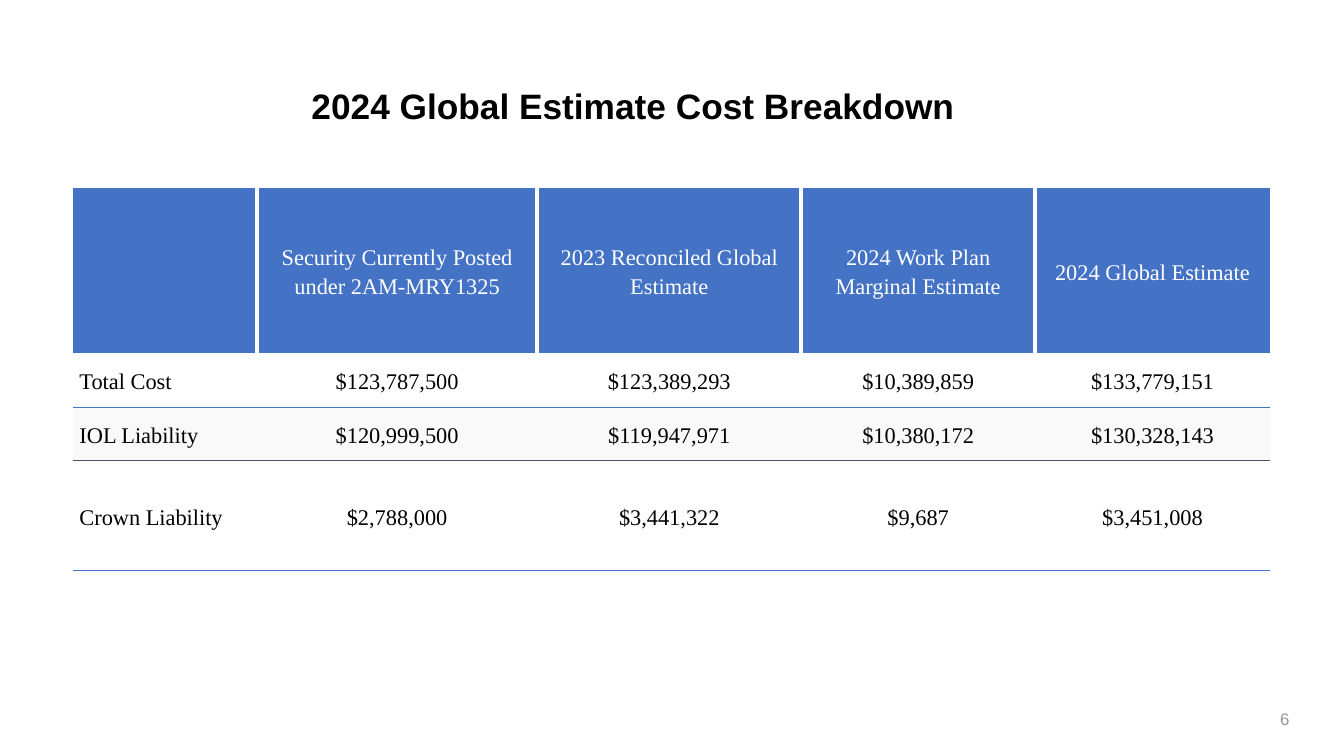
from dataclasses import dataclass
from typing import Any

from lxml.etree import SubElement
from pptx import Presentation
from pptx.dml.color import RGBColor
from pptx.enum.text import MSO_ANCHOR, PP_ALIGN
from pptx.oxml.ns import qn
from pptx.util import Pt

BLACK = RGBColor(0x00, 0x00, 0x00)
WHITE = RGBColor(0xFF, 0xFF, 0xFF)
BLUE = RGBColor(0x44, 0x72, 0xC4)
SLATE = RGBColor(0x44, 0x54, 0x6A)
PALE = RGBColor(0xFA, 0xF9, 0xF9)
GREY = RGBColor(0x96, 0x96, 0x96)
PLAIN = "{2D5ABB26-0587-4C30-8999-92F81FD0307C}"
WIDTHS = (131.8, 200.2, 188.6, 167, 167.8)


@dataclass(frozen=True)
class Edge:
    color: RGBColor
    width: float


@dataclass(frozen=True)
class Row:
    height: float
    cells: tuple[str, ...]
    ink: RGBColor = BLACK
    fill: RGBColor | None = None
    top: Edge | None = None
    base: Edge | None = None
    split: Edge | None = None


RULE = Edge(BLUE, 1)
DARK = Edge(SLATE, 1)
RIM = Edge(WHITE, 1.5)
ROWS = (
    Row(118.8, ("", "Security Currently Posted under 2AM-MRY1325",
                "2023 Reconciled Global Estimate",
                "2024 Work Plan Marginal Estimate", "2024 Global Estimate"),
        WHITE, BLUE, RIM, RIM, Edge(WHITE, 3)),
    Row(38.2, ("Total Cost", "$123,787,500", "$123,389,293",
               "$10,389,859", "$133,779,151"), top=RIM, base=RULE),
    Row(38.2, ("IOL Liability", "$120,999,500", "$119,947,971",
               "$10,380,172", "$130,328,143"), fill=PALE, top=RULE, base=DARK),
    Row(78.5, ("Crown Liability", "$2,788,000", "$3,441,322",
               "$9,687", "$3,451,008"), top=DARK, base=RULE),
)


def apply(item: Any, form: dict[str, Any]) -> None:
    for name, value in form.items():
        setattr(item, name, value)


def place(shape: Any, left: float, top: float, width: float, height: float) -> None:
    apply(shape, {"left": Pt(left), "top": Pt(top),
                  "width": Pt(width), "height": Pt(height)})


def write(frame: Any, text: str, para: dict[str, Any], font: dict[str, Any],
          color: RGBColor) -> None:
    frame.text = text
    line = frame.paragraphs[0]
    apply(line, para)
    face = line.runs[0].font
    apply(face, font)
    face.color.rgb = color


def border(cell: Any, edges: dict[str, Edge | None]) -> None:
    props = cell._tc.get_or_add_tcPr()
    spot = 0
    for side, edge in edges.items():
        if edge is None:
            continue
        line = SubElement(props, qn(f"a:ln{side}"), w=str(Pt(edge.width)))
        fill = SubElement(line, qn("a:solidFill"))
        SubElement(fill, qn("a:srgbClr"), val=str(edge.color))
        props.insert(spot, line)
        spot += 1


def style(cell: Any, row: Row, col: int) -> None:
    apply(cell, {"margin_left": Pt(5), "margin_right": Pt(5), "margin_top": 0,
                 "margin_bottom": 0, "vertical_anchor": MSO_ANCHOR.MIDDLE})
    if row.fill is None:
        cell.fill.background()
    else:
        cell.fill.solid()
        cell.fill.fore_color.rgb = row.fill
    border(cell, {"L": row.split if col else None,
                  "R": row.split if col < len(WIDTHS) - 1 else None,
                  "T": row.top, "B": row.base})
    if row.cells[col]:
        write(cell.text_frame, row.cells[col],
              {"alignment": PP_ALIGN.CENTER if col else PP_ALIGN.LEFT,
               "line_spacing": 1.15, "space_after": Pt(10)},
              {"name": "Times New Roman", "size": Pt(16)}, row.ink)


def add_costs(slide: Any) -> None:
    grid = slide.shapes.add_table(
        len(ROWS), len(WIDTHS), Pt(51.8), Pt(133.9), Pt(sum(WIDTHS)),
        Pt(sum(row.height for row in ROWS))).table
    apply(grid, {"first_row": True, "horz_banding": False})
    grid._tbl.tblPr.find(qn("a:tableStyleId")).text = PLAIN
    for col, width in enumerate(WIDTHS):
        grid.columns[col].width = Pt(width)
    for num, row in enumerate(ROWS):
        grid.rows[num].height = Pt(row.height)
        for col in range(len(WIDTHS)):
            style(grid.cell(num, col), row, col)


def add_title(slide: Any) -> None:
    title = slide.shapes.title
    place(title, 40.3, 66.2, 823.7, 24)
    frame = title.text_frame
    apply(frame, {"margin_left": 0, "margin_right": 0, "margin_top": 0,
                  "margin_bottom": 0, "word_wrap": True,
                  "vertical_anchor": MSO_ANCHOR.TOP})
    write(frame, "2024 Global Estimate Cost Breakdown",
          {"alignment": PP_ALIGN.CENTER, "line_spacing": Pt(24)},
          {"name": "Arial", "size": Pt(25.2), "bold": True}, BLACK)


def add_page(slide: Any) -> None:
    box = slide.shapes.add_textbox(Pt(848.2), Pt(504), Pt(79.9), Pt(23.8))
    box.text_frame.word_wrap = True
    write(box.text_frame, "6",
          {"alignment": PP_ALIGN.RIGHT, "line_spacing": 0.9},
          {"name": "Arial", "size": Pt(12)}, GREY)


def main() -> None:
    deck = Presentation()
    apply(deck, {"slide_width": Pt(960), "slide_height": Pt(540)})
    slide = deck.slides.add_slide(deck.slide_layouts[5])
    add_title(slide)
    add_page(slide)
    add_costs(slide)
    deck.save("out.pptx")


if __name__ == "__main__":
    main()
